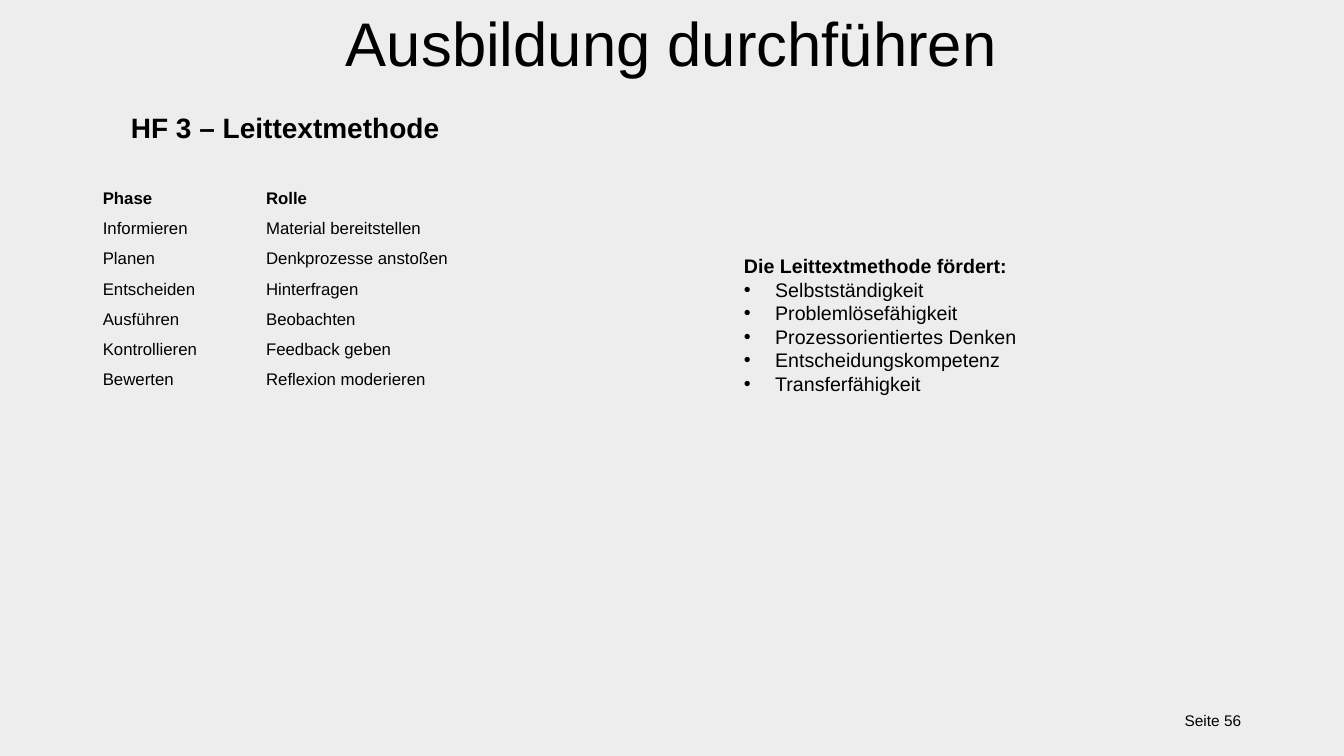
from lxml import etree
from pptx import Presentation
from pptx.dml.color import RGBColor
from pptx.enum.text import MSO_ANCHOR as Anchor, MSO_AUTO_SIZE as AutoSize, PP_ALIGN as Align
from pptx.oxml.ns import qn
from pptx.util import Inches, Pt

WIDTH, HEIGHT = Inches(13.33), Inches(7.5)
FONT, INK, PAPER = "Arial", "000000", "EDEDED"
NO_GRID_STYLE = "{2D5ABB26-0587-4C30-8999-92F81FD0307C}"

PHASES = [
    ("Phase", "Rolle"),
    ("Informieren", "Material bereitstellen"),
    ("Planen", "Denkprozesse anstoßen"),
    ("Entscheiden", "Hinterfragen"),
    ("Ausführen", "Beobachten"),
    ("Kontrollieren", "Feedback geben"),
    ("Bewerten", "Reflexion moderieren"),
]
SKILLS = ["Selbstständigkeit", "Problemlösefähigkeit", "Prozessorientiertes Denken",
          "Entscheidungskompetenz", "Transferfähigkeit"]


def color(hex_code):
    return RGBColor.from_string(hex_code)


def across(percent):
    return round(WIDTH * percent / 100)


def down(percent):
    return round(HEIGHT * percent / 100)


def area(left, top, width, height):
    """Turn percentages of the slide into a position and size."""
    return across(left), down(top), across(width), down(height)


def place(sp, box, anchor=Anchor.TOP):
    sp.left, sp.top, sp.width, sp.height = box
    tf = sp.text_frame
    tf.word_wrap = True
    tf.auto_size = AutoSize.NONE
    tf.vertical_anchor = anchor
    return tf


def write(p, text, size=14, bold=False, align=Align.LEFT):
    p.alignment = align
    p.space_before = Pt(0)
    r = p.add_run()
    r.text = text
    f = r.font
    f.name, f.size, f.bold = FONT, Pt(size), bold
    f.color.rgb = color(INK)


def set_bullet(p, char=None):
    """Give the paragraph a hanging bullet, or none without a character."""
    pPr = p._p.get_or_add_pPr()
    indent = Inches(0.31) if char else 0
    pPr.set("marL", str(indent))
    pPr.set("indent", str(-indent))
    if char:
        etree.SubElement(pPr, qn("a:buFont"), typeface=FONT)
        etree.SubElement(pPr, qn("a:buChar"), char=char)
    else:
        etree.SubElement(pPr, qn("a:buNone"))


def add_label(s, box, text, anchor=Anchor.TOP, **fmt):
    tf = place(s.shapes.add_textbox(*box), box, anchor)
    write(tf.paragraphs[0], text, **fmt)


def add_phase_table(s, box, column_widths):
    table = s.shapes.add_table(len(PHASES), len(column_widths), *box).table
    table.horz_banding = False
    table._tbl.tblPr.find(qn("a:tableStyleId")).text = NO_GRID_STYLE
    for column, width in zip(table.columns, column_widths):
        column.width = across(width)
    for i, row in enumerate(PHASES):
        for j, text in enumerate(row):
            cell = table.cell(i, j)
            cell.fill.background()
            cell.vertical_anchor = Anchor.MIDDLE
            write(cell.text_frame.paragraphs[0], text, size=12, bold=i == 0)


def fill_list(tf, heading, items):
    p = tf.paragraphs[0]
    set_bullet(p)
    write(p, heading, bold=True)
    for item in items:
        p = tf.add_paragraph()
        set_bullet(p, "•")
        write(p, item)


def main():
    prs = Presentation()
    prs.slide_width, prs.slide_height = WIDTH, HEIGHT
    s = prs.slides.add_slide(prs.slide_layouts[1])
    s.background.fill.solid()
    s.background.fill.fore_color.rgb = color(PAPER)

    title = place(s.shapes.title, area(23.75, 0, 52.45, 11.2))
    write(title.paragraphs[0], "Ausbildung durchführen", size=44, align=Align.CENTER)
    add_label(s, area(9, 14, 82.9, 5.87), "HF 3 – Leittextmethode", size=20, bold=True)
    add_phase_table(s, area(6.9, 24.27, 35.4, 28), (12.15, 23.25))
    skills = place(s.placeholders[1], area(54.6, 32.93, 27.4, 20.13))
    fill_list(skills, "Die Leittextmethode fördert:", SKILLS)
    add_label(s, area(84, 92.67, 9.1, 5.33), "Seite 56", Anchor.MIDDLE,
              size=11, align=Align.RIGHT)
    prs.save("out.pptx")


if __name__ == "__main__":
    main()
